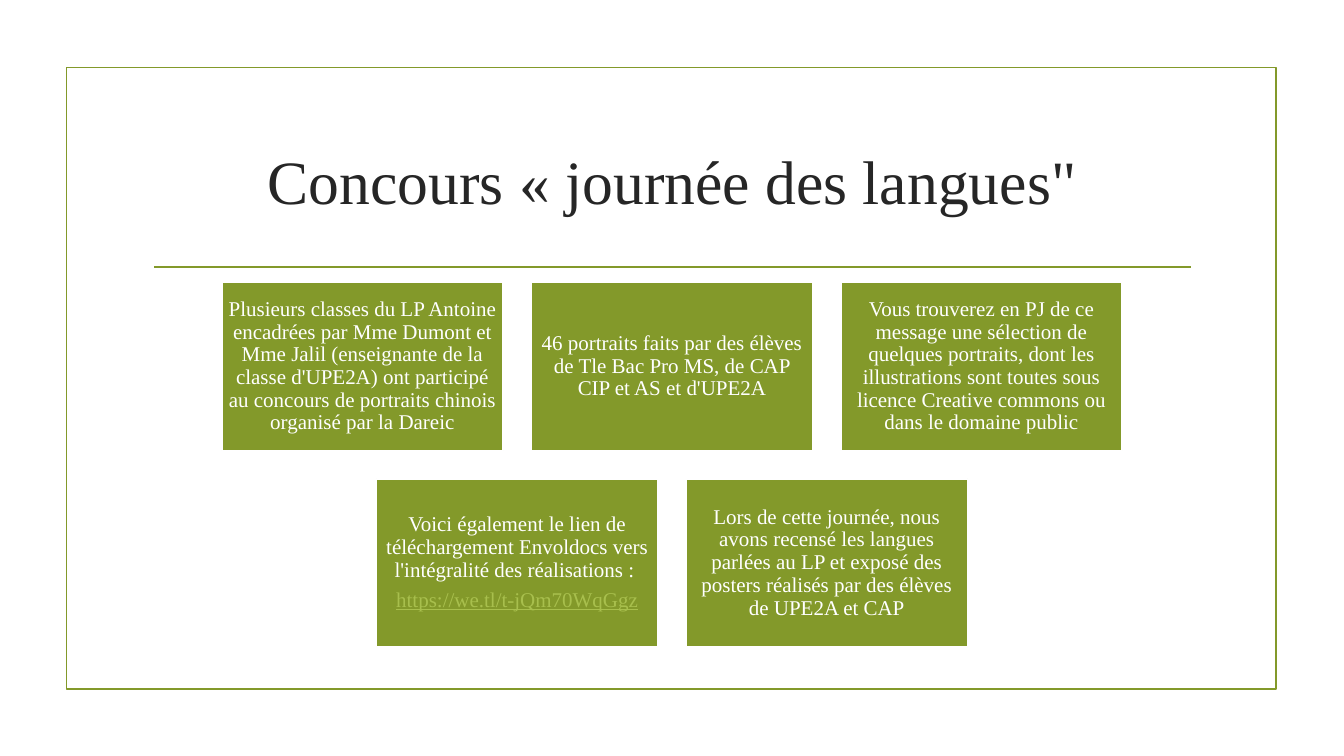
from lxml.etree import SubElement
from pptx import Presentation
from pptx.dml.color import RGBColor
from pptx.enum.shapes import MSO_CONNECTOR, MSO_SHAPE
from pptx.enum.text import MSO_ANCHOR, PP_ALIGN
from pptx.oxml.ns import qn
from pptx.util import Inches, Pt

COLOURS = {
    "olive": "83992A",
    "white": "FFFFFF",
    "title": "262626",
    "link": "A8BF4D",
}
CARD_WIDTH, CARD_HEIGHT, CARD_GAP = 20.93, 22.27, 2.1
FIRST_ROW_TOP, ROW_STEP = 37.33, 26
LINK = "https://we.tl/t-jQm70WqGgz"
CARD_ROWS = [
    [
        ["Plusieurs classes du LP Antoine encadrées par Mme Dumont et Mme Jalil "
         "(enseignante de la classe d'UPE2A) ont participé au concours de "
         "portraits chinois organisé par la Dareic"],
        ["46 portraits faits par des élèves de Tle Bac Pro MS, de CAP CIP et AS "
         "et d'UPE2A"],
        ["Vous trouverez en PJ de ce message une sélection de quelques portraits, "
         "dont les illustrations sont toutes sous licence Creative commons ou "
         "dans le domaine public"],
    ],
    [
        ["Voici également le lien de téléchargement Envoldocs vers l'intégralité "
         "des réalisations : ", LINK],
        ["Lors de cette journée, nous avons recensé les langues parlées au LP et "
         "exposé des posters réalisés par des élèves de UPE2A et CAP"],
    ],
]


class SlideBuilder:
    font_name = "Times New Roman"
    line_width = Pt(1.25)

    def __init__(self, presentation):
        self.width = presentation.slide_width
        self.height = presentation.slide_height
        self.slide = presentation.slides.add_slide(presentation.slide_layouts[5])

    def across(self, percent):
        return round(self.width * percent / 100)

    def down(self, percent):
        return round(self.height * percent / 100)

    def box(self, left, top, width, height):
        return self.across(left), self.down(top), self.across(width), self.down(height)

    def colour(self, name):
        return RGBColor.from_string(COLOURS[name])

    def rectangle(self, box, line, fill=None):
        shape = self.slide.shapes.add_shape(MSO_SHAPE.RECTANGLE, *self.box(*box))
        shape.shadow.inherit = False
        shape.line.color.rgb = self.colour(line)
        shape.line.width = self.line_width
        if fill:
            shape.fill.solid()
            shape.fill.fore_color.rgb = self.colour(fill)
        else:
            shape.fill.background()
        return shape

    def rule(self, left, right, top):
        connector = self.slide.shapes.add_connector(
            MSO_CONNECTOR.STRAIGHT,
            self.across(left), self.down(top), self.across(right), self.down(top))
        connector.line.color.rgb = self.colour("olive")
        connector.line.width = self.line_width
        SubElement(connector._element.spPr, qn("a:effectLst"))

    def run(self, paragraph, text, size, colour):
        paragraph.alignment = PP_ALIGN.CENTER
        run = paragraph.add_run()
        run.text = text
        run.font.name = self.font_name
        run.font.size = Pt(size)
        run.font.color.rgb = self.colour(colour)
        return run

    def title(self, text, box):
        shape = self.slide.shapes.title
        shape.left, shape.top, shape.width, shape.height = self.box(*box)
        shape.text_frame.vertical_anchor = MSO_ANCHOR.MIDDLE
        self.run(shape.text_frame.paragraphs[0], text, 44, "title")

    def card(self, box, texts):
        frame = self.rectangle(box, "white", "olive").text_frame
        frame.word_wrap = True
        frame.vertical_anchor = MSO_ANCHOR.MIDDLE
        frame.margin_left = frame.margin_right = Inches(0.06)
        frame.margin_top = frame.margin_bottom = Inches(0.06)
        for index, text in enumerate(texts):
            paragraph = frame.add_paragraph() if index else frame.paragraphs[0]
            paragraph.line_spacing = 0.9
            paragraph.space_after = Pt(5.25)
            is_link = text == LINK
            run = self.run(paragraph, text, 15, "link" if is_link else "white")
            if is_link:
                run.font.underline = True

    def card_row(self, row, cards):
        step = CARD_WIDTH + CARD_GAP
        left = (100 - len(cards) * step + CARD_GAP) / 2
        top = FIRST_ROW_TOP + row * ROW_STEP
        for column, texts in enumerate(cards):
            self.card((left + column * step, top, CARD_WIDTH, CARD_HEIGHT), texts)


def main():
    presentation = Presentation()
    presentation.slide_width = Inches(13.33)
    presentation.slide_height = Inches(7.5)
    builder = SlideBuilder(presentation)
    builder.rectangle((4.95, 8.93, 90.02, 82.27), "olive")
    builder.rule(11.48, 88.6, 35.33)
    builder.title("Concours « journée des langues\"", (10.65, 14.27, 78.77, 19.07))
    for row, cards in enumerate(CARD_ROWS):
        builder.card_row(row, cards)
    presentation.save("out.pptx")


if __name__ == "__main__":
    main()
